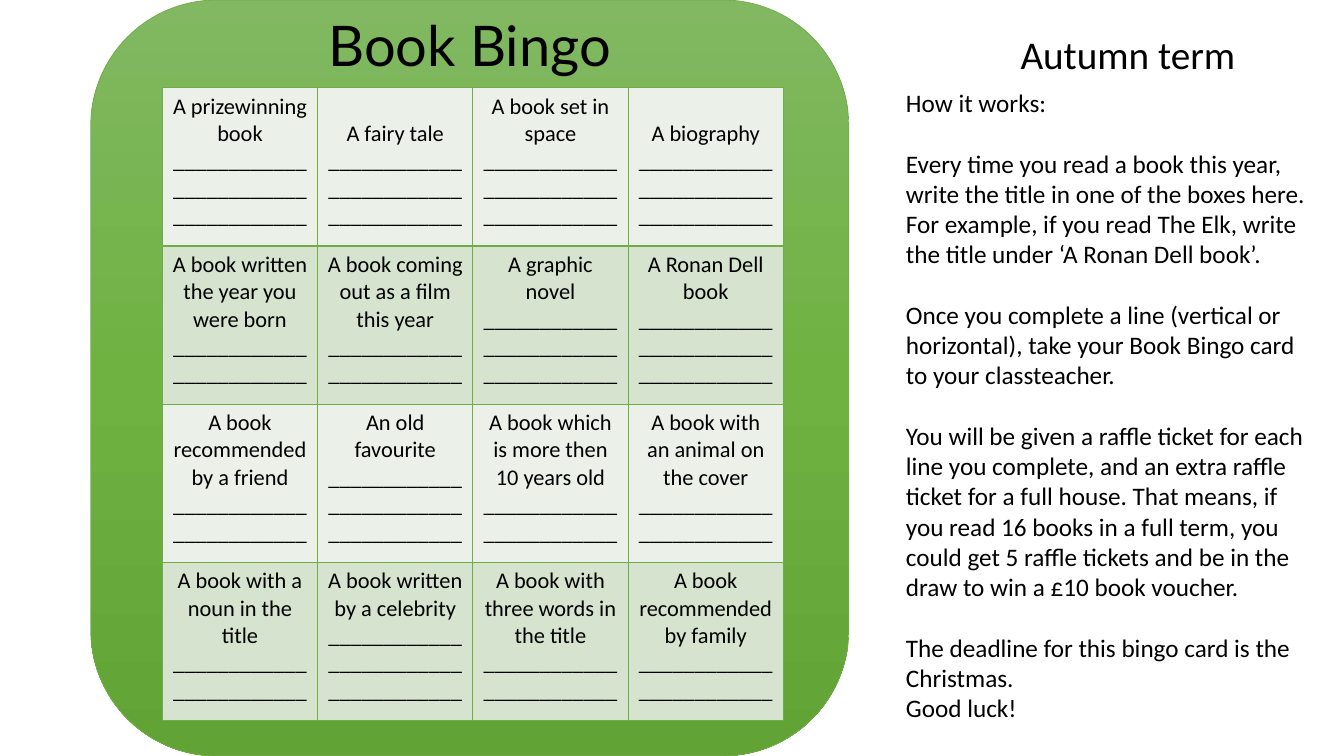
from copy import deepcopy
from itertools import product

from lxml import etree
from pptx import Presentation, util as u
from pptx.dml.color import RGBColor
from pptx.enum import shapes, text
from pptx.oxml.ns import qn

WIDE, HIGH = u.Inches(13.33), u.Inches(7.5)
COL, ROW = WIDE / 100, HIGH / 100
HUES = {"ink": "000000", "edge": "70AD47", "top": "81B861", "mid": "6FB242",
        "low": "62A336", "pale": "EBF1E9", "dark": "D5E3CF"}
GRID = [
    [("A prizewinning book", 2), ("A fairy tale", 1),
     ("A book set in space", 2), ("A biography", 1)],
    [("A book written the year you were born", 3),
     ("A book coming out as a film this year", 3),
     ("A graphic novel", 2), ("A Ronan Dell book", 2)],
    [("A book recommended by a friend", 3), ("An old favourite", 2),
     ("A book which is more then 10 years old", 3),
     ("A book with an animal on the cover", 3)],
    [("A book with a noun in the title", 3),
     ("A book written by a celebrity", 2),
     ("A book with three words in the title", 3),
     ("A book recommended by family", 3)],
]
RULES = [
    "How it works:",
    "Every time you read a book this year, write the title in one of the boxes "
    "here. For example, if you read The Elk, write the title under ‘A Ronan "
    "Dell book’.",
    "Once you complete a line (vertical or horizontal), take your Book Bingo "
    "card to your classteacher.",
    "You will be given a raffle ticket for each line you complete, and an extra "
    "raffle ticket for a full house. That means, if you read 16 books in a full "
    "term, you could get 5 raffle tickets and be in the draw to win a £10 book "
    "voucher.",
    "The deadline for this bingo card is the Christmas.",
    "Good luck!",
]


def hue(name):
    """Return the named colour."""
    return RGBColor.from_string(HUES[name])


def scale(box):
    """Turn a box in columns and rows into slide lengths."""
    return [round(n * step) for n, step in zip(box, (COL, ROW, COL, ROW))]


def style(para, size, face="Calibri", align=text.PP_ALIGN.CENTER):
    """Set the font and alignment of a paragraph."""
    para.font.size, para.font.name = u.Pt(size), face
    para.font.color.rgb = hue("ink")
    para.alignment = align


def heading(shape, box, words, size, face):
    """Fill a one-line heading centred in its box."""
    shape.left, shape.top, shape.width, shape.height = scale(box)
    frame = shape.text_frame
    frame.text = words
    frame.word_wrap = False
    frame.auto_size = text.MSO_AUTO_SIZE.SHAPE_TO_FIT_TEXT
    frame.vertical_anchor = text.MSO_ANCHOR.TOP
    style(frame.paragraphs[0], size, face)


def panel(slide, box):
    """Draw the rounded green card with its three-stop gradient."""
    back = slide.shapes.add_shape(
        shapes.MSO_SHAPE.ROUNDED_RECTANGLE, *scale(box))
    back.shadow.inherit = False
    back.line.color.rgb, back.line.width = hue("edge"), u.Pt(0.5)
    back.fill.gradient()
    back.fill.gradient_angle = 270
    stops = back.element.xpath(".//a:gsLst")[0]
    stops.insert(1, deepcopy(stops[0]))
    for stop, name, spot in zip(back.fill.gradient_stops,
                                ("top", "mid", "low"), (0, 0.5, 1)):
        stop.color.rgb, stop.position = hue(name), spot


def border(cell):
    """Give a cell a thin green line on each side."""
    props = cell._tc.get_or_add_tcPr()
    for spot, side in enumerate(("lnL", "lnR", "lnT", "lnB")):
        line = etree.Element(qn(f"a:{side}"), w=str(u.Pt(1)))
        fill = etree.SubElement(line, qn("a:solidFill"))
        etree.SubElement(fill, qn("a:srgbClr"), val=HUES["edge"])
        props.insert(spot, line)


def bingo(slide, box):
    """Fill the box with the grid of book prompts."""
    count = len(GRID)
    left, top, wide, high = scale(box)
    table = slide.shapes.add_table(count, count, left, top, wide, high).table
    for col in table.columns:
        col.width = wide // count
    for row in table.rows:
        row.height = high // count
    for r, c in product(range(count), repeat=2):
        words, lines = GRID[r][c]
        cell = table.cell(r, c)
        cell.text = words + " " + "_" * 12 * min(3, 5 - lines)
        style(cell.text_frame.paragraphs[0], 16)
        if lines == 1:
            cell.margin_top = u.Inches(0.32)
        cell.fill.solid()
        cell.fill.fore_color.rgb = hue("dark" if r % 2 else "pale")
        border(cell)


def card(slide, box):
    """Build the bingo card: panel, grid and title."""
    left, top, wide, high = box
    panel(slide, box)
    bingo(slide, (left + 5.33, top + 11.6, wide - 10.2, high - 16.27))
    title = slide.shapes.title
    heading(title, (left + 16.25, top + 0.67, wide - 32.5, 10.27),
            "Book Bingo", 40, "Lato")
    title.element.getparent().append(title.element)


def guide(slide, box):
    """Build the term heading and the rules below it."""
    left, top, wide, high = box
    head = slide.shapes.add_textbox(0, 0, 0, 0)
    heading(head, (left + 8.4, top, wide - 13.8, 7.6),
            "Autumn term", 28, "Calibri")
    note = slide.shapes.add_textbox(
        *scale((left, top + 7.6, wide, high - 7.6)))
    frame = note.text_frame
    frame.word_wrap = True
    frame.auto_size = text.MSO_AUTO_SIZE.SHAPE_TO_FIT_TEXT
    frame.text = "\n".join(RULES)
    for para in frame.paragraphs:
        style(para, 18, align=text.PP_ALIGN.LEFT)
    for para in frame.paragraphs[:-2]:
        para.space_after = u.Pt(21.6)


def main():
    """Build and save the slide."""
    deck = Presentation()
    deck.slide_width, deck.slide_height = WIDE, HIGH
    slide = deck.slides.add_slide(deck.slide_layouts[5])
    card(slide, (6.75, 0, 56.41, 100))
    guide(slide, (66.67, 3.33, 31.5, 93.73))
    deck.save("out.pptx")


if __name__ == "__main__":
    main()
